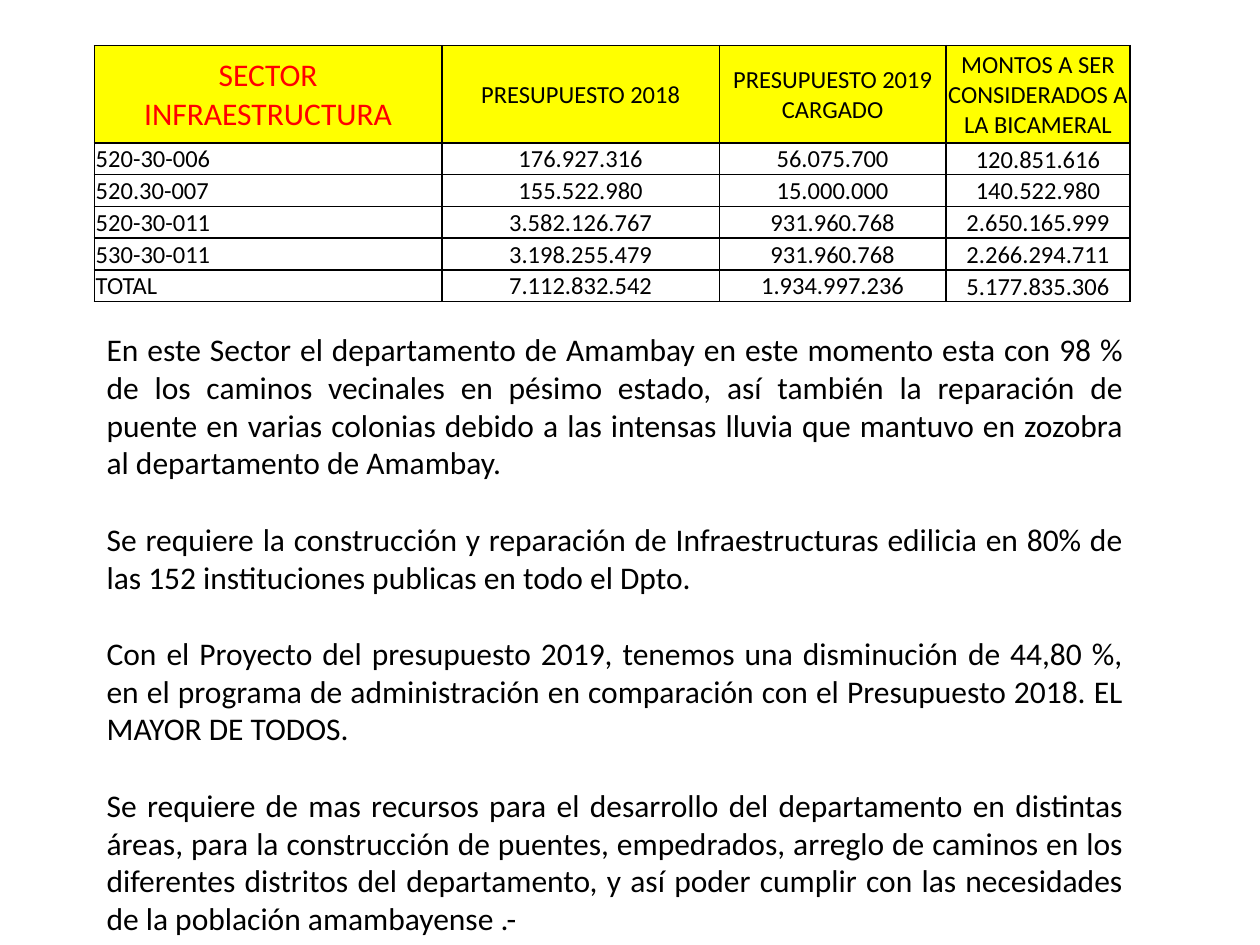
from typing import NamedTuple

from lxml import etree
from pptx import Presentation
from pptx.dml.color import RGBColor
from pptx.enum.text import MSO_ANCHOR, MSO_AUTO_SIZE, PP_ALIGN
from pptx.oxml.ns import qn
from pptx.util import Cm, Pt

LEFT, CENTER, JUSTIFY = PP_ALIGN.LEFT, PP_ALIGN.CENTER, PP_ALIGN.JUSTIFY
MIDDLE, BOTTOM = MSO_ANCHOR.MIDDLE, MSO_ANCHOR.BOTTOM
FIT_SHAPE = MSO_AUTO_SIZE.SHAPE_TO_FIT_TEXT
BLACK, RED, YELLOW = "000000", "FF0000", "FFFF00"
BORDER_SIDES = ("a:lnL", "a:lnR", "a:lnT", "a:lnB")
CELL_FORMAT = {
    "margin_left": Cm(0.03),
    "margin_right": Cm(0.03),
    "margin_top": Cm(0.03),
    "margin_bottom": 0,
}


class Column(NamedTuple):
    heading: str
    width: float
    align: PP_ALIGN = CENTER
    anchor: MSO_ANCHOR = MIDDLE
    heading_size: int = 14
    heading_color: str = BLACK


COLUMNS = [
    Column("SECTOR INFRAESTRUCTURA", 7.01, align=LEFT, heading_size=18, heading_color=RED),
    Column("PRESUPUESTO 2018", 5.59),
    Column("PRESUPUESTO 2019 CARGADO", 4.57),
    Column("MONTOS A SER CONSIDERADOS A LA BICAMERAL", 3.71, anchor=BOTTOM),
]
BUDGET_LINES = [
    ("520-30-006", "176.927.316", "56.075.700", "120.851.616"),
    ("520.30-007", "155.522.980", "15.000.000", "140.522.980"),
    ("520-30-011", "3.582.126.767", "931.960.768", "2.650.165.999"),
    ("530-30-011", "3.198.255.479", "931.960.768", "2.266.294.711"),
    ("TOTAL", "7.112.832.542", "1.934.997.236", "5.177.835.306"),
]
REMARKS = [
    "En este Sector el departamento de Amambay en este momento esta con 98 % de los "
    "caminos vecinales en pésimo estado, así también la reparación de puente en varias "
    "colonias debido a las intensas lluvia que mantuvo en zozobra al departamento de Amambay.",
    "Se requiere la construcción y reparación de Infraestructuras edilicia en 80% de las "
    "152 instituciones publicas en todo el Dpto.",
    "Con el Proyecto del presupuesto 2019, tenemos una disminución de 44,80 %, en el "
    "programa de administración en comparación con el Presupuesto 2018. EL MAYOR DE TODOS.",
    "Se requiere de mas recursos para el desarrollo del departamento en distintas áreas, "
    "para la construcción de puentes, empedrados, arreglo de caminos en los diferentes "
    "distritos del departamento, y así poder cumplir con las necesidades de la población "
    "amambayense .-",
]
HEADING_HEIGHT, LINE_HEIGHT = 1.96, 0.64


def rgb(code: str) -> RGBColor:
    return RGBColor.from_string(code)


def write(paragraph, text: str, size: int, color: str, align: PP_ALIGN) -> None:
    paragraph.alignment = align
    run = paragraph.add_run()
    run.text = text
    run.font.name = "Calibri"
    run.font.size = Pt(size)
    run.font.color.rgb = rgb(color)


def add_borders(cell) -> None:
    properties = cell._tc.get_or_add_tcPr()
    for position, side in enumerate(BORDER_SIDES):
        line = etree.Element(qn(side), w=str(Pt(1)))
        fill = etree.SubElement(line, qn("a:solidFill"))
        etree.SubElement(fill, qn("a:srgbClr"), val=BLACK)
        properties.insert(position, line)


def format_cell(cell, anchor: MSO_ANCHOR) -> None:
    for name, value in CELL_FORMAT.items():
        setattr(cell, name, value)
    cell.vertical_anchor = anchor
    add_borders(cell)


def add_budget(slide) -> None:
    width = sum(column.width for column in COLUMNS)
    height = HEADING_HEIGHT + LINE_HEIGHT * len(BUDGET_LINES)
    budget = slide.shapes.add_table(
        len(BUDGET_LINES) + 1, len(COLUMNS), Cm(1.9), Cm(0.92), Cm(width), Cm(height)
    ).table
    for row in budget.rows:
        row.height = Cm(LINE_HEIGHT)
    budget.rows[0].height = Cm(HEADING_HEIGHT)
    for index, column in enumerate(COLUMNS):
        budget.columns[index].width = Cm(column.width)
        heading = budget.cell(0, index)
        heading.fill.solid()
        heading.fill.fore_color.rgb = rgb(YELLOW)
        format_cell(heading, MIDDLE)
        write(heading.text_frame.paragraphs[0], column.heading,
              column.heading_size, column.heading_color, CENTER)
        for row_number, amounts in enumerate(BUDGET_LINES, start=1):
            cell = budget.cell(row_number, index)
            cell.fill.background()
            format_cell(cell, column.anchor)
            write(cell.text_frame.paragraphs[0], amounts[index], 14, BLACK, column.align)


def add_remarks(slide) -> None:
    frame = slide.shapes.add_textbox(Cm(1.9), Cm(6.53), Cm(21), Cm(12.57)).text_frame
    frame.word_wrap = True
    frame.auto_size = FIT_SHAPE
    for index, remark in enumerate(REMARKS):
        paragraph = frame.add_paragraph() if index else frame.paragraphs[0]
        paragraph.space_before = Pt(22 if index else 0)
        write(paragraph, remark, 18, BLACK, JUSTIFY)


def main() -> None:
    """Build the infrastructure budget slide."""
    presentation = Presentation()
    presentation.slide_width, presentation.slide_height = Cm(25.4), Cm(19.05)
    slide = presentation.slides.add_slide(presentation.slide_layouts[6])
    add_budget(slide)
    add_remarks(slide)
    presentation.save("out.pptx")


if __name__ == "__main__":
    main()
